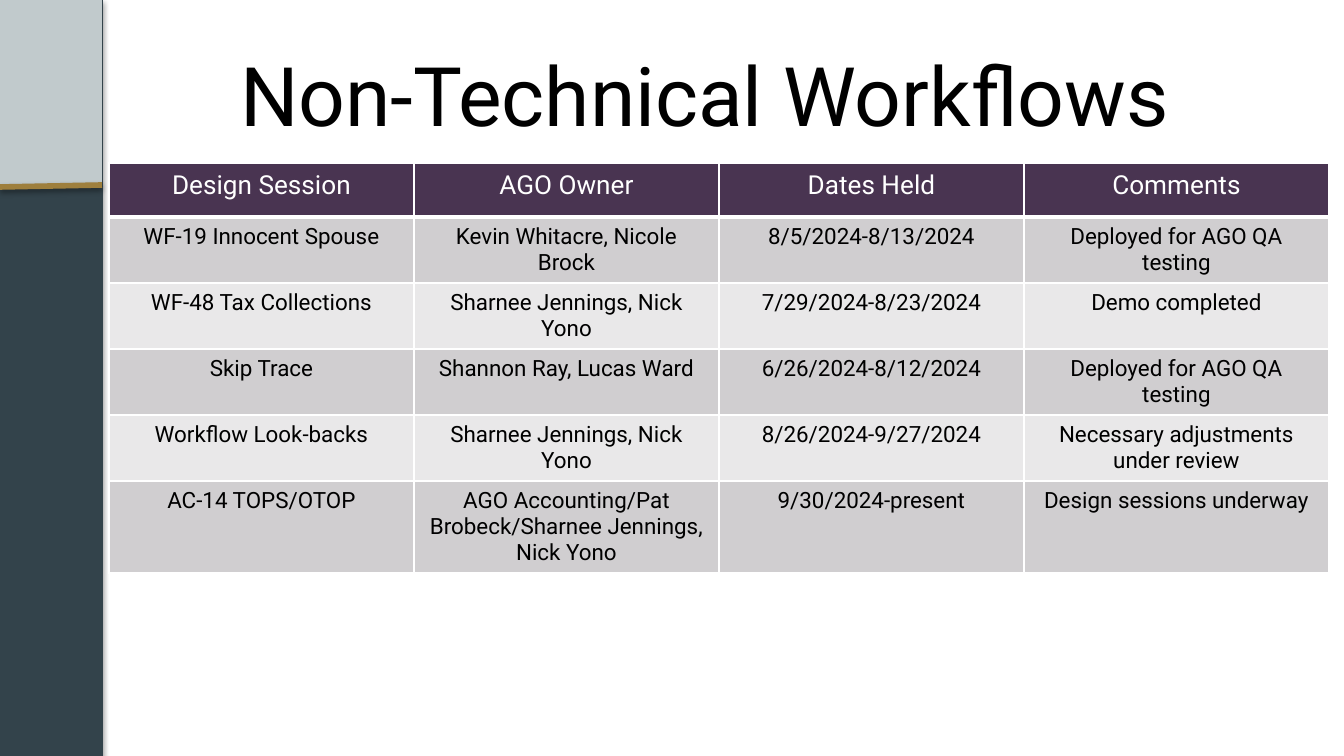
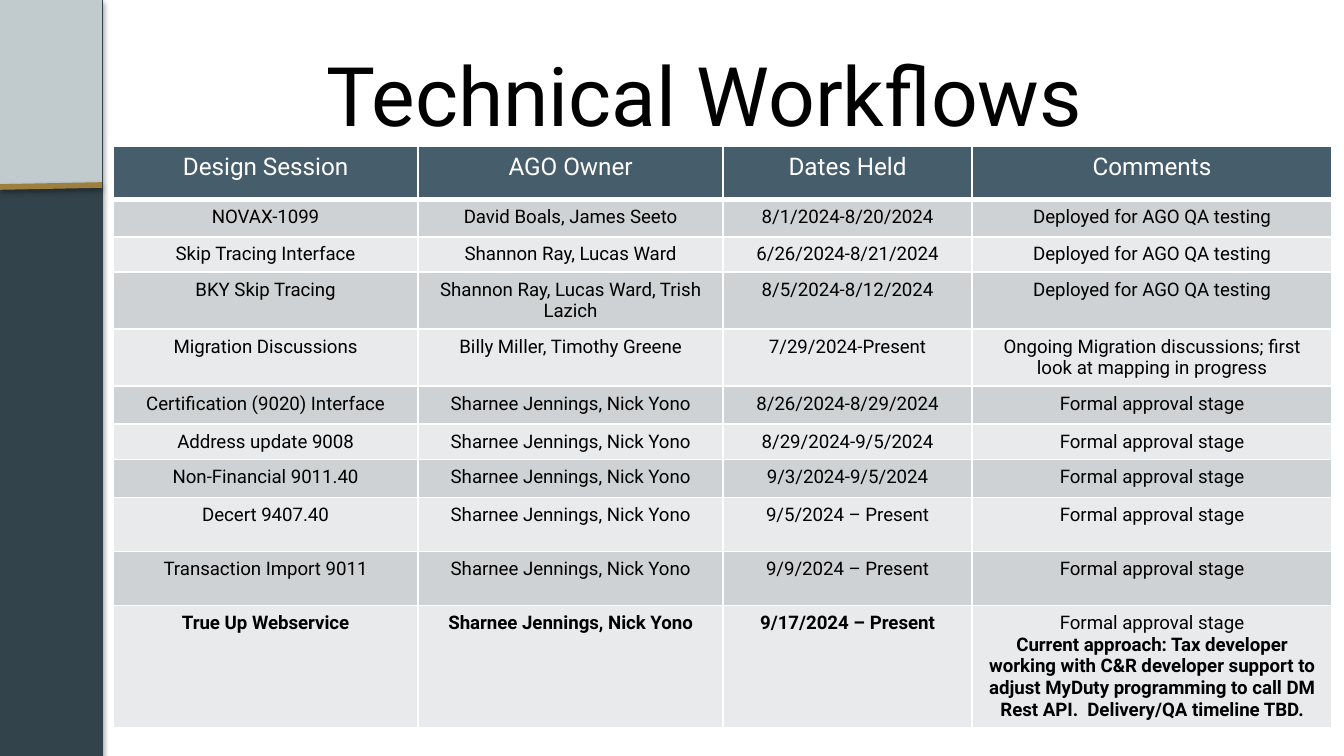
from dataclasses import dataclass
from typing import Union

from lxml.etree import SubElement
from pptx import Presentation
from pptx.dml.color import RGBColor
from pptx.enum.shapes import MSO_CONNECTOR, MSO_SHAPE
from pptx.enum.text import MSO_ANCHOR, MSO_AUTO_SIZE, PP_ALIGN
from pptx.oxml.ns import qn
from pptx.util import Emu, Pt

# Scale and shared style
EMU_PER_PX = 914400 / 134.4
SLIDE_W, SLIDE_H = 1344, 756
BAND_W, PANEL_H = 102, 186
TITLE_ONLY = 5
FONT = "Roboto"

BLACK = RGBColor(0x00, 0x00, 0x00)
WHITE = RGBColor(0xFF, 0xFF, 0xFF)
SLATE = RGBColor(0x33, 0x43, 0x4B)
MIST = RGBColor(0xC1, 0xCA, 0xCC)
GOLD = RGBColor(0x9E, 0x7F, 0x3D)
PLUM = RGBColor(0x49, 0x34, 0x51)
PLUM_DARK_ROW = RGBColor(0xD0, 0xCE, 0xD0)
PLUM_LIGHT_ROW = RGBColor(0xE9, 0xE8, 0xE9)
STEEL = RGBColor(0x46, 0x5D, 0x6B)
STEEL_DARK_ROW = RGBColor(0xCF, 0xD2, 0xD4)
STEEL_LIGHT_ROW = RGBColor(0xE9, 0xEA, 0xEB)

HEADERS = ("Design Session", "AGO Owner", "Dates Held", "Comments")
JENNINGS_YONO = "Sharnee Jennings, Nick Yono"
RAY_WARD = "Shannon Ray, Lucas Ward"
DEPLOYED = "Deployed for AGO QA testing"
APPROVAL = "Formal approval stage"


@dataclass(frozen=True)
class Para:
    text: str
    bold: bool = False


Entry = Union[str, tuple[Para, ...]]


@dataclass(frozen=True)
class Session:
    name: Entry
    owner: Entry
    dates: Entry
    comments: Entry
    height: int = 54

    def entries(self) -> tuple[Entry, ...]:
        return self.name, self.owner, self.dates, self.comments


@dataclass(frozen=True)
class TableStyle:
    header: RGBColor
    dark_row: RGBColor
    light_row: RGBColor
    header_pt: int
    body_pt: int


@dataclass(frozen=True)
class WorkflowSlide:
    title: str
    left: int
    top: int
    columns: tuple[int, ...]
    style: TableStyle
    sessions: tuple[Session, ...]


NON_TECHNICAL = WorkflowSlide(
    "Non-Technical Workflows", 109, 163, (305, 305, 305, 305),
    TableStyle(PLUM, PLUM_DARK_ROW, PLUM_LIGHT_ROW, 14, 12),
    (
        Session("WF-19 Innocent Spouse", "Kevin Whitacre, Nicole Brock",
                "8/5/2024-8/13/2024", DEPLOYED),
        Session("WF-48 Tax Collections", JENNINGS_YONO,
                "7/29/2024-8/23/2024", "Demo completed"),
        Session("Skip Trace", RAY_WARD, "6/26/2024-8/12/2024", DEPLOYED),
        Session("Workflow Look-backs", JENNINGS_YONO,
                "8/26/2024-9/27/2024", "Necessary adjustments under review"),
        Session("AC-14 TOPS/OTOP",
                "AGO Accounting/Pat Brobeck/Sharnee Jennings, Nick Yono",
                "9/30/2024-present", "Design sessions underway"),
    ),
)

TECHNICAL = WorkflowSlide(
    "Technical Workflows", 113, 146, (305, 305, 249, 360),
    TableStyle(STEEL, STEEL_DARK_ROW, STEEL_LIGHT_ROW, 13, 10),
    (
        Session("NOVAX-1099", "David Boals, James Seeto",
                "8/1/2024-8/20/2024", DEPLOYED, 37),
        Session("Skip Tracing Interface", RAY_WARD,
                "6/26/2024-8/21/2024", DEPLOYED, 30),
        Session("BKY Skip Tracing", "Shannon Ray, Lucas Ward, Trish Lazich",
                "8/5/2024-8/12/2024", DEPLOYED),
        Session("Migration Discussions", "Billy Miller, Timothy Greene",
                "7/29/2024-Present",
                "Ongoing Migration discussions; first look at mapping in progress"),
        Session("Certification (9020) Interface", JENNINGS_YONO,
                "8/26/2024-8/29/2024", APPROVAL, 38),
        Session("Address update 9008", JENNINGS_YONO,
                "8/29/2024-9/5/2024", APPROVAL, 35),
        Session("Non-Financial 9011.40", JENNINGS_YONO,
                "9/3/2024-9/5/2024", APPROVAL, 38),
        Session("Decert 9407.40", JENNINGS_YONO, "9/5/2024 – Present", APPROVAL),
        Session("Transaction Import 9011", JENNINGS_YONO,
                "9/9/2024 – Present", APPROVAL),
        Session(
            (Para("True Up Webservice", True),),
            (Para(JENNINGS_YONO, True),),
            (Para("9/17/2024 – Present", True),),
            (Para(APPROVAL),
             Para("Current approach: Tax developer working with C&R developer "
                  "support to adjust MyDuty programming to call DM Rest API.  "
                  "Delivery/QA timeline TBD.", True)),
        ),
    ),
)


def px(n: int) -> Emu:
    return Emu(round(n * EMU_PER_PX))


def add_run(p, text: str, size: int, color: RGBColor, bold: bool = False) -> None:
    p.alignment = PP_ALIGN.CENTER
    r = p.add_run()
    r.text = text
    r.font.name = FONT
    r.font.size = Pt(size)
    r.font.bold = bold
    r.font.color.rgb = color


def add_shadow(sp, opacity: int, distance: float) -> None:
    """Give an already formatted shape a soft downward shadow."""
    effects = SubElement(sp._element.spPr, qn("a:effectLst"))
    shadow = SubElement(effects, qn("a:outerShdw"), blurRad=str(Pt(3.1)),
                        dist=str(Pt(distance)), dir="5400000", rotWithShape="0")
    color = SubElement(shadow, qn("a:srgbClr"), val=str(BLACK))
    SubElement(color, qn("a:alpha"), val=str(opacity * 1000))


def add_side_band(s) -> None:
    # Dark full-height band
    band = s.shapes.add_shape(MSO_SHAPE.RECTANGLE, 0, 0, px(BAND_W), px(SLIDE_H))
    band.fill.solid()
    band.fill.fore_color.rgb = SLATE
    band.line.color.rgb = SLATE
    band.line.width = Pt(0.75)
    add_shadow(band, 35, 1.8)

    # Light panel on top
    panel = s.shapes.add_shape(MSO_SHAPE.RECTANGLE, 0, 0, px(BAND_W), px(PANEL_H))
    panel.fill.solid()
    panel.fill.fore_color.rgb = MIST
    panel.line.fill.background()
    panel.shadow.inherit = False

    # Gold rule, rising slightly to the right
    rule = s.shapes.add_connector(MSO_CONNECTOR.STRAIGHT, 0, px(PANEL_H + 1),
                                  px(BAND_W), px(PANEL_H - 1))
    rule.line.color.rgb = GOLD
    rule.line.width = Pt(3)
    add_shadow(rule, 38, 1.6)


def set_title(s, text: str) -> None:
    title = s.shapes.title
    title.left, title.top, title.width, title.height = map(px, (133, 31, 1144, 126))
    tf = title.text_frame
    tf.word_wrap = True
    tf.auto_size = MSO_AUTO_SIZE.NONE
    tf.vertical_anchor = MSO_ANCHOR.MIDDLE
    add_run(tf.paragraphs[0], text, 44, BLACK)


def set_borders(cell, top: int, bottom: int) -> None:
    tc_pr = cell._tc.get_or_add_tcPr()
    for side, width in (("L", 1), ("R", 1), ("T", top), ("B", bottom)):
        ln = SubElement(tc_pr, qn(f"a:ln{side}"), w=str(Pt(width)))
        fill = SubElement(ln, qn("a:solidFill"))
        SubElement(fill, qn("a:srgbClr"), val=str(WHITE))


def fill_cell(cell, entry: Entry, row: int, style: TableStyle) -> None:
    # The heavy rule lies between the header and the first session
    set_borders(cell, top=3 if row == 1 else 1, bottom=3 if row == 0 else 1)
    cell.fill.solid()
    if row == 0:
        fill, color, size = style.header, WHITE, style.header_pt
    else:
        fill = style.dark_row if row % 2 else style.light_row
        color, size = BLACK, style.body_pt
    cell.fill.fore_color.rgb = fill

    paras = (Para(entry),) if isinstance(entry, str) else entry
    tf = cell.text_frame
    for i, para in enumerate(paras):
        p = tf.add_paragraph() if i else tf.paragraphs[0]
        add_run(p, para.text, size, color, para.bold)


def add_session_table(s, content: WorkflowSlide) -> None:
    rows = (Session(*HEADERS), *content.sessions)
    table = s.shapes.add_table(
        len(rows), len(HEADERS), px(content.left), px(content.top),
        px(sum(content.columns)), px(sum(row.height for row in rows))).table
    for column, width in zip(table.columns, content.columns):
        column.width = px(width)
    for i, session in enumerate(rows):
        table.rows[i].height = px(session.height)
        for j, entry in enumerate(session.entries()):
            fill_cell(table.cell(i, j), entry, i, content.style)


def main() -> None:
    prs = Presentation()
    prs.slide_width, prs.slide_height = px(SLIDE_W), px(SLIDE_H)
    for content in (NON_TECHNICAL, TECHNICAL):
        s = prs.slides.add_slide(prs.slide_layouts[TITLE_ONLY])
        s.background.fill.solid()
        s.background.fill.fore_color.rgb = WHITE
        add_side_band(s)
        set_title(s, content.title)
        add_session_table(s, content)
    prs.save("out.pptx")


if __name__ == "__main__":
    main()
